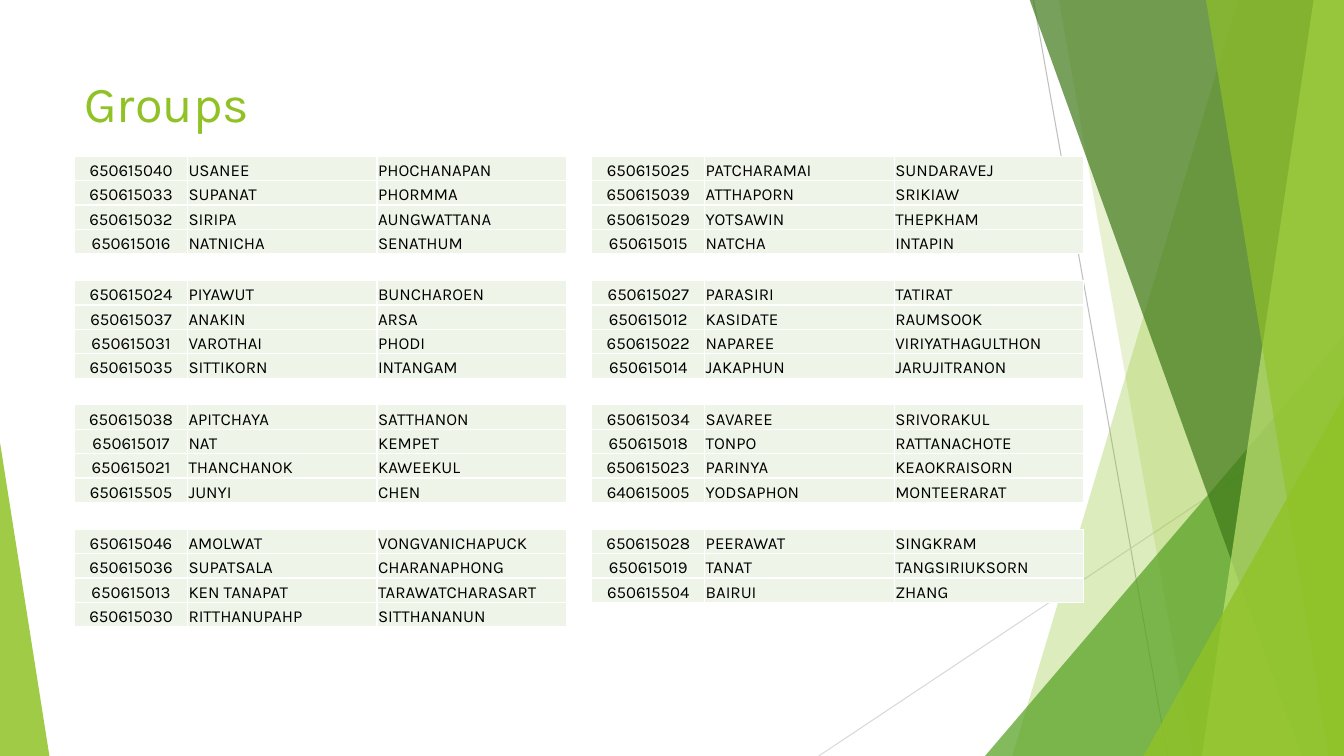
from lxml import etree
from pptx import Presentation
from pptx.dml.color import RGBColor
from pptx.enum import shapes, text
from pptx.oxml import ns
from pptx.util import Inches, Pt

FONT = "Karla"
LIME = RGBColor(0x90, 0xC2, 0x26)
PALE_LIME = RGBColor(0xC0, 0xE4, 0x74)
GREEN = RGBColor(0x54, 0xA0, 0x21)
DARK_GREEN = RGBColor(0x3F, 0x78, 0x19)
CELL_GREEN = RGBColor(0xEE, 0xF4, 0xE8)
GREY = RGBColor(0xBF, 0xBF, 0xBF)
LIGHT_GREY = RGBColor(0xD9, 0xD9, 0xD9)
WHITE = RGBColor(0xFF, 0xFF, 0xFF)
BLACK = RGBColor(0, 0, 0)

WIDTH, HEIGHT = 13.33, 7.5
COLUMN_WIDTHS = (1.12, 1.88, 1.88)
ROW_HEIGHT = 0.97 / 4
TABLES_LEFT, TABLES_TOP = 0.74, 1.55
PITCH_X, PITCH_Y = 5.13, 3.7 / 3

LEFT_GROUPS = [
    [("650615040", "USANEE", "PHOCHANAPAN"),
     ("650615033", "SUPANAT", "PHORMMA"),
     ("650615032", "SIRIPA", "AUNGWATTANA"),
     ("650615016", "NATNICHA", "SENATHUM")],
    [("650615024", "PIYAWUT", "BUNCHAROEN"),
     ("650615037", "ANAKIN", "ARSA"),
     ("650615031", "VAROTHAI", "PHODI"),
     ("650615035", "SITTIKORN", "INTANGAM")],
    [("650615038", "APITCHAYA", "SATTHANON"),
     ("650615017", "NAT", "KEMPET"),
     ("650615021", "THANCHANOK", "KAWEEKUL"),
     ("650615505", "JUNYI", "CHEN")],
    [("650615046", "AMOLWAT", "VONGVANICHAPUCK"),
     ("650615036", "SUPATSALA", "CHARANAPHONG"),
     ("650615013", "KEN TANAPAT", "TARAWATCHARASART"),
     ("650615030", "RITTHANUPAHP", "SITTHANANUN")],
]
RIGHT_GROUPS = [
    [("650615025", "PATCHARAMAI", "SUNDARAVEJ"),
     ("650615039", "ATTHAPORN", "SRIKIAW"),
     ("650615029", "YOTSAWIN", "THEPKHAM"),
     ("650615015", "NATCHA", "INTAPIN")],
    [("650615027", "PARASIRI", "TATIRAT"),
     ("650615012", "KASIDATE", "RAUMSOOK"),
     ("650615022", "NAPAREE", "VIRIYATHAGULTHON"),
     ("650615014", "JAKAPHUN", "JARUJITRANON")],
    [("650615034", "SAVAREE", "SRIVORAKUL"),
     ("650615018", "TONPO", "RATTANACHOTE"),
     ("650615023", "PARINYA", "KEAOKRAISORN"),
     ("640615005", "YODSAPHON", "MONTEERARAT")],
    [("650615028", "PEERAWAT", "SINGKRAM"),
     ("650615019", "TANAT", "TANGSIRIUKSORN"),
     ("650615504", "BAIRUI", "ZHANG")],
]


def style_facet(sp, color, opacity):
    """Fill a shape at the given opacity in percent, without outline or shadow."""
    sp.shadow.inherit = False
    sp.line.fill.background()
    sp.fill.solid()
    sp.fill.fore_color.rgb = color
    clr = sp.fill._xPr.find(".//" + ns.qn("a:srgbClr"))
    etree.SubElement(clr, ns.qn("a:alpha"), val=str(opacity * 1000))


def add_band(s, top_x, bottom_x, color, opacity):
    """Draw a slanted band that reaches the right edge of the slide."""
    top = -0.01
    corners = [(top_x, top), (WIDTH, top), (WIDTH, HEIGHT), (bottom_x, HEIGHT)]
    points = [(Inches(x), Inches(y)) for x, y in corners]
    fb = s.shapes.build_freeform(*points[0])
    fb.add_line_segments(points[1:], close=True)
    style_facet(fb.convert_to_shape(), color, opacity)


def add_triangle(s, left, top, width, apex, color, opacity):
    """Draw a triangle that stands on the bottom edge of the slide."""
    sp = s.shapes.add_shape(shapes.MSO_SHAPE.ISOSCELES_TRIANGLE, Inches(left),
                            Inches(top), Inches(width), Inches(HEIGHT - top))
    sp.adjustments[0] = apex
    style_facet(sp, color, opacity)


def add_line(s, x1, y1, x2, y2, color):
    cxn = s.shapes.add_connector(shapes.MSO_CONNECTOR.STRAIGHT, Inches(x1),
                                 Inches(y1), Inches(x2), Inches(y2))
    cxn.line.color.rgb = color
    cxn.line.width = Pt(0.75)
    etree.SubElement(cxn._element.spPr, ns.qn("a:effectLst"))


def set_font(p, size, color):
    p.font.name = FONT
    p.font.size = Pt(size)
    p.font.color.rgb = color


def add_title(s, title):
    tf = s.shapes.add_textbox(Inches(0.74), Inches(0.67),
                              Inches(9.4), Inches(1.44)).text_frame
    tf.word_wrap = True
    p = tf.paragraphs[0]
    p.text = title
    set_font(p, 36, LIME)


def add_borders(cell):
    tc_pr = cell._tc.get_or_add_tcPr()
    for side in ("lnL", "lnR", "lnT", "lnB"):
        ln = etree.SubElement(tc_pr, ns.qn("a:" + side), w=str(Pt(1)))
        fill = etree.SubElement(ln, ns.qn("a:solidFill"))
        etree.SubElement(fill, ns.qn("a:srgbClr"), val=str(WHITE))


def fill_cell(cell, value, centred):
    add_borders(cell)
    cell.fill.solid()
    cell.fill.fore_color.rgb = CELL_GREEN
    cell.margin_left = cell.margin_right = cell.margin_top = Inches(0.01)
    cell.margin_bottom = 0
    cell.vertical_anchor = text.MSO_ANCHOR.BOTTOM
    p = cell.text_frame.paragraphs[0]
    p.text = value
    p.alignment = text.PP_ALIGN.CENTER if centred else text.PP_ALIGN.LEFT
    set_font(p, 12, BLACK)


def add_group_table(s, left, top, members):
    table = s.shapes.add_table(
        len(members), len(COLUMN_WIDTHS), Inches(left), Inches(top),
        Inches(sum(COLUMN_WIDTHS)), Inches(ROW_HEIGHT * len(members))).table
    table.first_row = table.horz_banding = False
    for column, width in zip(table.columns, COLUMN_WIDTHS):
        column.width = Inches(width)
    for i, member in enumerate(members):
        for j, value in enumerate(member):
            fill_cell(table.cell(i, j), value, centred=j == 0)


def add_backdrop(s):
    add_line(s, 10.25, 0, 11.58, HEIGHT, GREY)
    add_line(s, WIDTH, 4.03, 8.12, HEIGHT, LIGHT_GREY)
    add_band(s, 12.28, 10.04, LIME, 30)
    add_band(s, 10.5, 11.83, LIME, 20)
    add_triangle(s, 9.77, 3.33, 3.56, 1, GREEN, 72)
    add_band(s, 10.21, 12.91, DARK_GREEN, 70)
    add_band(s, 13.03, 11.92, PALE_LIME, 70)
    add_band(s, 11.96, 13.18, LIME, 65)
    add_triangle(s, 11.34, 3.93, 1.99, 1, LIME, 80)
    add_triangle(s, 0, 4.39, 0.49, 0, LIME, 85)


def main():
    prs = Presentation()
    prs.slide_width, prs.slide_height = Inches(WIDTH), Inches(HEIGHT)
    s = prs.slides.add_slide(prs.slide_layouts[6])
    add_backdrop(s)
    add_title(s, "Groups")
    for i, groups in enumerate((LEFT_GROUPS, RIGHT_GROUPS)):
        for j, members in enumerate(groups):
            add_group_table(s, TABLES_LEFT + i * PITCH_X,
                            TABLES_TOP + j * PITCH_Y, members)
    prs.save("out.pptx")


if __name__ == "__main__":
    main()
